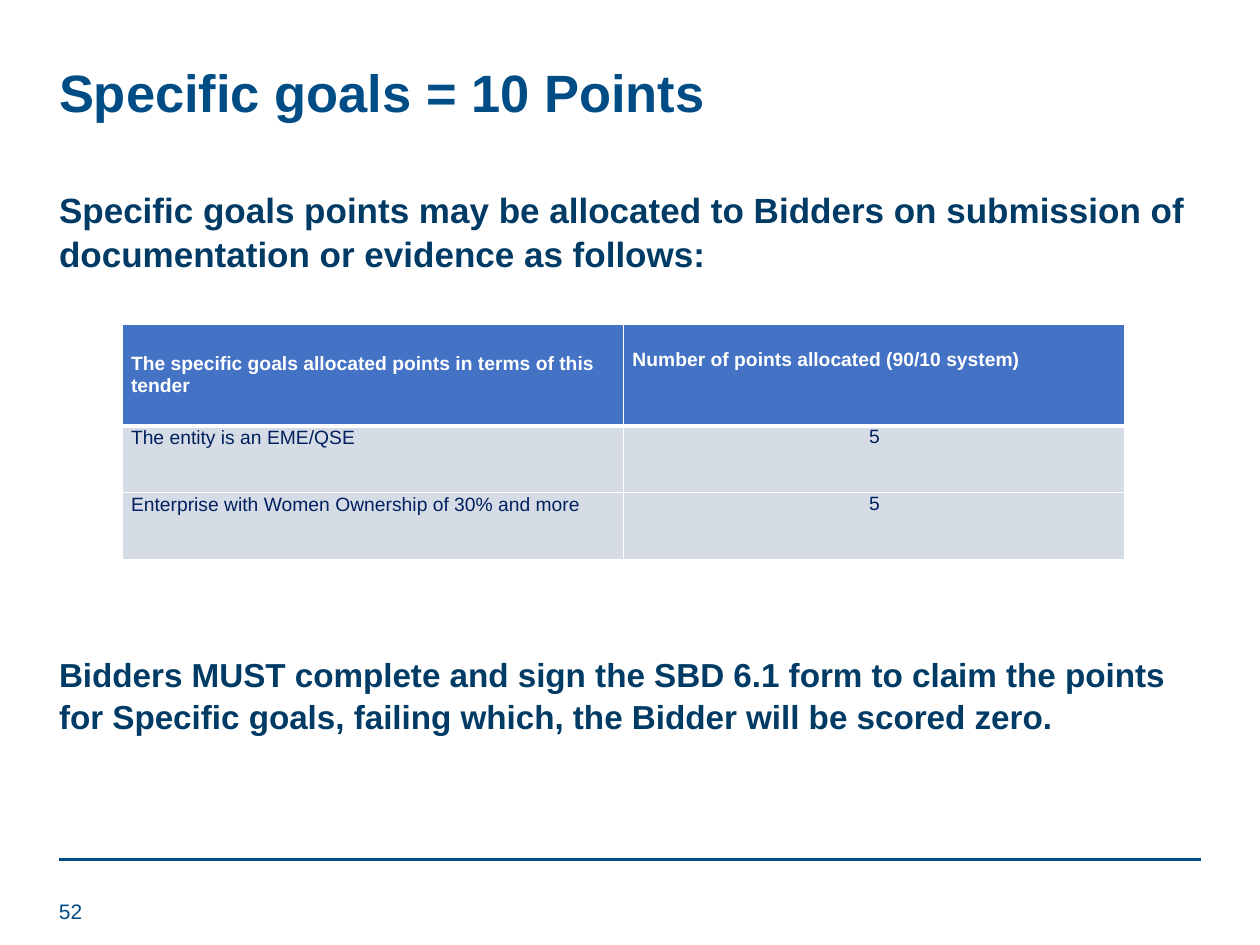
from dataclasses import dataclass
from typing import Any, NamedTuple

from lxml import etree
from pptx import Presentation
from pptx import util as u
from pptx.dml import color
from pptx.enum import shapes, text
from pptx.oxml import ns

PX = 9144  # EMU per px, at 100 px to the inch
LEFT, CENTER, JUSTIFY = text.PP_ALIGN.LEFT, text.PP_ALIGN.CENTER, text.PP_ALIGN.JUSTIFY
TOP, MIDDLE = text.MSO_ANCHOR.TOP, text.MSO_ANCHOR.MIDDLE


@dataclass(frozen=True)
class Theme:
    font: str = "Arial"
    brand: str = "004C85"
    body: str = "003B65"
    header_fill: str = "4472C4"
    row_fill: str = "D6DCE5"
    white: str = "FFFFFF"
    title_size: int = 30
    intro_size: int = 20
    closing_size: int = 19
    number_size: int = 12
    table_size: int = 11


THEME = Theme()


class Box(NamedTuple):
    left: int
    top: int
    width: int
    height: int

    def emu(self) -> list[int]:
        return [value * PX for value in self]


@dataclass(frozen=True)
class Line:
    words: str
    size: int
    color: str
    bold: bool = False
    align: Any = LEFT
    spacing: float = 1.0
    before: float = 0


@dataclass(frozen=True)
class TextBlock:
    box: Box
    lines: tuple[Line, ...]
    anchor: Any = TOP


@dataclass(frozen=True)
class TableCell:
    line: Line
    fill: str
    anchor: Any = TOP
    bottom_margin: int = 0
    top_border: int = 1
    bottom_border: int = 1


def apply_format(target: Any, values: dict[str, Any]) -> None:
    for name, value in values.items():
        setattr(target, name, value)


def write_line(paragraph: Any, line: Line) -> None:
    apply_format(paragraph, {"alignment": line.align, "line_spacing": line.spacing,
                             "space_before": u.Pt(line.before), "space_after": u.Pt(0)})
    run = paragraph.add_run()
    run.text = line.words
    apply_format(run.font, {"name": THEME.font, "size": u.Pt(line.size), "bold": line.bold})
    run.font.color.rgb = color.RGBColor.from_string(line.color)


def draw_text(slide: Any, block: TextBlock) -> None:
    frame = slide.shapes.add_textbox(*block.box.emu()).text_frame
    apply_format(frame, {"word_wrap": True, "vertical_anchor": block.anchor})
    for index, line in enumerate(block.lines):
        write_line(frame.add_paragraph() if index else frame.paragraphs[0], line)


def draw_rule(slide: Any, left: int, right: int, top: int) -> None:
    rule = slide.shapes.add_connector(shapes.MSO_CONNECTOR.STRAIGHT,
                                      left * PX, top * PX, right * PX, top * PX)
    rule.line.color.rgb = color.RGBColor.from_string(THEME.brand)
    rule.line.width = u.Pt(2)
    etree.SubElement(rule._element.spPr, ns.qn("a:effectLst"))


def set_borders(cell: Any, widths: dict[str, int]) -> None:
    properties = cell._tc.get_or_add_tcPr()
    for index, (side, width) in enumerate(widths.items()):
        border = etree.Element(ns.qn(f"a:ln{side}"), w=str(u.Pt(width)))
        fill = etree.SubElement(border, ns.qn("a:solidFill"))
        etree.SubElement(fill, ns.qn("a:srgbClr"), val=THEME.white)
        properties.insert(index, border)  # borders come before the fill


def draw_table(slide: Any, box: Box, heights: list[int], rows: list[list[TableCell]]) -> None:
    table = slide.shapes.add_table(len(rows), len(rows[0]), *box.emu()).table
    for column in table.columns:
        column.width = box.width * PX // len(rows[0])
    for row_index, (height, row) in enumerate(zip(heights, rows)):
        table.rows[row_index].height = height * PX
        for column_index, item in enumerate(row):
            cell = table.cell(row_index, column_index)
            apply_format(cell, {"margin_left": 7 * PX, "margin_right": 7 * PX, "margin_top": 0,
                                "margin_bottom": item.bottom_margin * PX,
                                "vertical_anchor": item.anchor})
            cell.fill.solid()
            cell.fill.fore_color.rgb = color.RGBColor.from_string(item.fill)
            set_borders(cell, {"L": 1, "R": 1, "T": item.top_border, "B": item.bottom_border})
            write_line(cell.text_frame.paragraphs[0], item.line)


def header_cell(words: str, align: Any = LEFT, bottom_margin: int = 0) -> TableCell:
    line = Line(words, THEME.table_size, THEME.white, True, align)
    return TableCell(line, THEME.header_fill, MIDDLE, bottom_margin, bottom_border=3)


def goal_row(goal: str, points: str, top_border: int = 1) -> list[TableCell]:
    navy = "002060"
    lines = (Line(goal, THEME.table_size, navy, align=JUSTIFY, spacing=1.07),
             Line(points, THEME.table_size, navy, align=CENTER))
    return [TableCell(line, THEME.row_fill, top_border=top_border) for line in lines]


def main() -> None:
    presentation = Presentation()
    presentation.slide_width, presentation.slide_height = 1000 * PX, 750 * PX
    slide = presentation.slides.add_slide(presentation.slide_layouts[6])

    # Footer rule
    draw_rule(slide, 47, 953, 682)

    # Title, page number and body
    title = Line("Specific goals = 10 Points", THEME.title_size, THEME.brand, True, spacing=0.9)
    number = Line("52", THEME.number_size, THEME.brand)
    intro = Line("Specific goals points may be allocated to Bidders on submission of "
                 "documentation or evidence as follows:",
                 THEME.intro_size, THEME.body, True, spacing=1.05)
    closing = Line("Bidders MUST complete and sign the SBD 6.1 form to claim the points "
                   "for Specific goals, failing which, the Bidder will be scored zero.",
                   THEME.closing_size, THEME.body, True, spacing=1.05, before=216)
    for block in (TextBlock(Box(37, 48, 862, 58), (title,)),
                  TextBlock(Box(37, 703, 46, 40), (number,), MIDDLE),
                  TextBlock(Box(37, 143, 915, 465), (intro, closing))):
        draw_text(slide, block)

    # Points table
    draw_table(slide, Box(97, 257, 796, 187), [81, 53, 53], [
        [header_cell("The specific goals allocated points in terms of this tender"),
         header_cell("Number of points allocated (90/10 system)", JUSTIFY, 24)],
        goal_row("The entity is an EME/QSE", "5", top_border=3),
        goal_row("Enterprise with Women Ownership of 30% and more", "5"),
    ])

    presentation.save("out.pptx")


if __name__ == "__main__":
    main()
